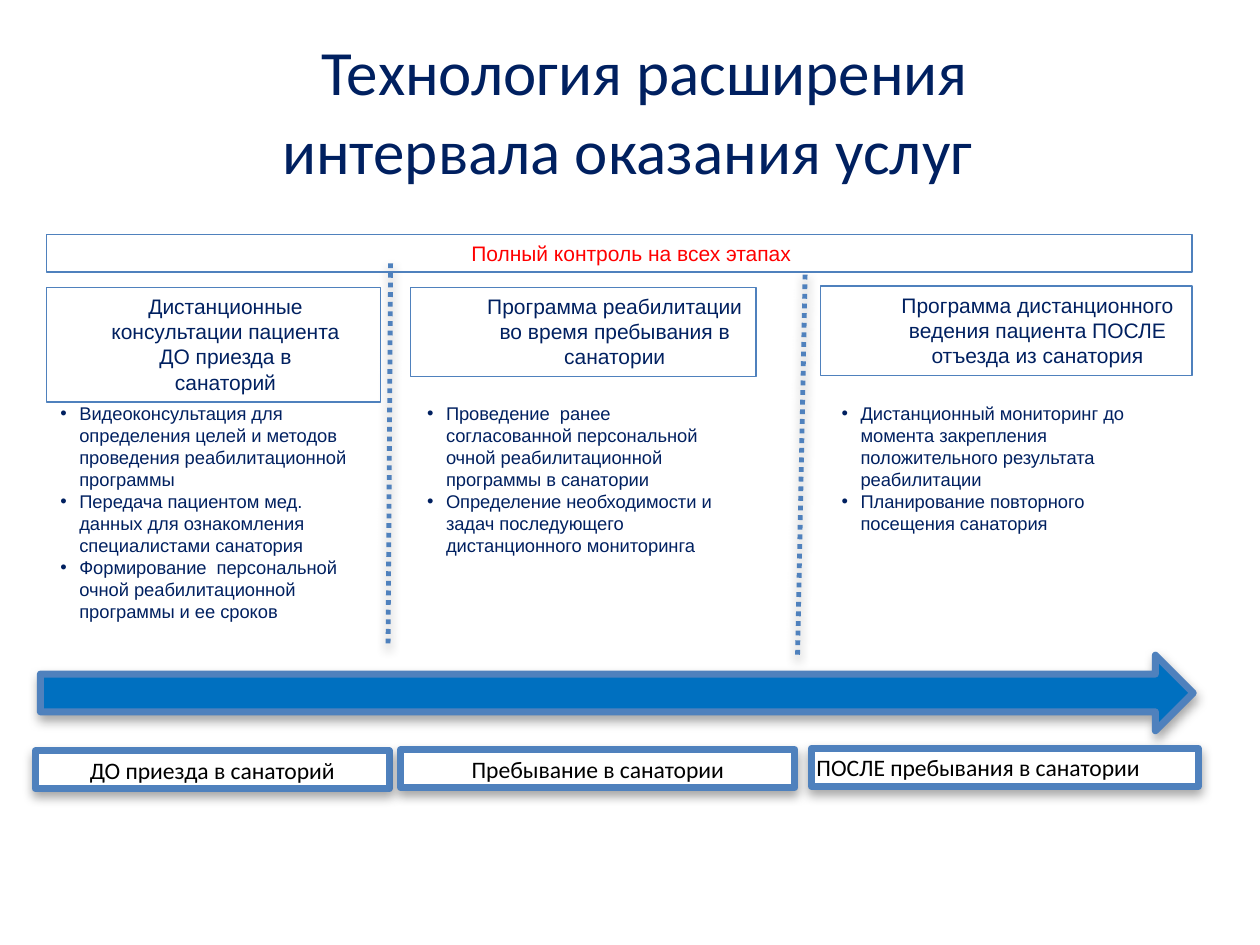
from dataclasses import dataclass
from typing import Optional

import pptx
import pptx.dml.color
import pptx.enum.dml
import pptx.enum.shapes
import pptx.enum.text
import pptx.oxml.ns
import pptx.util
from lxml import etree
from pptx.util import Inches

COLORS = {
    "navy": "002060",
    "red": "FF0000",
    "black": "000000",
    "white": "FFFFFF",
    "border": "4F81BD",
    "arrow": "0070C0",
}
ALIGN = pptx.enum.text.PP_ALIGN
ANCHOR = pptx.enum.text.MSO_ANCHOR
SHAPE = pptx.enum.shapes.MSO_SHAPE

PLAIN_INSETS = (0.1, 0.05, 0.1, 0.05)
LIST_INSETS = (0, 0.05, 0.31, 0.05)
CAPTION_INSETS = (0.04, 0.04, 0.04, 0.04)


@dataclass
class Area:
    left: float
    top: float
    width: float
    height: float

    def lengths(self) -> tuple:
        return tuple(Inches(n) for n in (self.left, self.top, self.width, self.height))


@dataclass
class Stage:
    heading: str
    heading_area: Area
    heading_insets: tuple
    points: list
    points_area: Area
    caption: str
    caption_area: Area
    caption_align: ALIGN


STAGES = [
    Stage(
        "Дистанционные консультации пациента ДО приезда в санаторий",
        Area(0.37, 2.28, 2.65, 0.91), LIST_INSETS,
        ["Видеоконсультация для определения целей и методов проведения реабилитационной программы",
         "Передача пациентом мед. данных для ознакомления специалистами санатория",
         "Формирование  персональной очной реабилитационной программы и ее сроков"],
        Area(0.37, 3.14, 2.72, 1.87),
        "ДО приезда в санаторий", Area(0.28, 5.96, 2.81, 0.3), ALIGN.CENTER,
    ),
    Stage(
        "Программа реабилитации во время пребывания в санатории",
        Area(3.26, 2.28, 2.74, 0.71), PLAIN_INSETS,
        ["Проведение  ранее согласованной персональной очной реабилитационной программы в санатории",
         "Определение необходимости и задач последующего дистанционного мониторинга"],
        Area(3.28, 3.14, 2.92, 1.34),
        "Пребывание в санатории", Area(3.18, 5.95, 3.13, 0.3), ALIGN.CENTER,
    ),
    Stage(
        "Программа дистанционного ведения пациента ПОСЛЕ отъезда из санатория",
        Area(6.51, 2.27, 2.95, 0.71), PLAIN_INSETS,
        ["Дистанционный мониторинг до момента закрепления положительного результата реабилитации",
         "Планирование повторного посещения санатория"],
        Area(6.57, 3.14, 2.92, 1.34),
        "ПОСЛЕ пребывания в санатории", Area(6.44, 5.94, 3.07, 0.3), ALIGN.LEFT,
    ),
]
DIVIDERS = [((3.1, 2.09), (3.08, 5.12)), ((6.39, 2.18), (6.33, 5.2))]


def color(name: str) -> pptx.dml.color.RGBColor:
    return pptx.dml.color.RGBColor.from_string(COLORS[name])


def add_element(parent, tag: str, **attributes: str):
    return etree.SubElement(parent, pptx.oxml.ns.qn(tag), attributes)


def cast_shadow(shape, opacity: int) -> None:
    """Add a soft shadow below a shape whose fill and line are already set."""
    effects = add_element(shape._element.spPr, "a:effectLst")
    shadow = add_element(effects, "a:outerShdw", blurRad=str(pptx.util.Pt(6)),
                         dist=str(pptx.util.Pt(3)), dir="5400000", rotWithShape="0")
    tint = add_element(shadow, "a:srgbClr", val=COLORS["black"])
    add_element(tint, "a:alpha", val=str(opacity * 1000))


def add_span(para, text: str, size: float, font: str, ink: str) -> None:
    span = para.add_run()
    span.text = text
    span.font.size = pptx.util.Pt(size)
    span.font.name = font
    span.font.color.rgb = color(ink)


def indent(para, left: float, first: float) -> None:
    properties = para._p.get_or_add_pPr()
    properties.set("marL", str(Inches(left)))
    properties.set("indent", str(Inches(first)))


def set_frame(frame, insets: tuple, anchor: ANCHOR) -> None:
    frame.word_wrap = True
    frame.auto_size = pptx.enum.text.MSO_AUTO_SIZE.SHAPE_TO_FIT_TEXT
    frame.vertical_anchor = anchor
    (frame.margin_left, frame.margin_top,
     frame.margin_right, frame.margin_bottom) = (Inches(n) for n in insets)


def add_outlined(page, kind: SHAPE, area: Area, width: float, fill: Optional[str] = None):
    shape = page.shapes.add_shape(kind, *area.lengths())
    if fill:
        shape.fill.solid()
        shape.fill.fore_color.rgb = color(fill)
    else:
        shape.fill.background()
    shape.line.color.rgb = color("border")
    shape.line.width = pptx.util.Pt(width)
    if width > 1:
        cast_shadow(shape, 35)
    else:
        shape.shadow.inherit = False
    return shape


def add_heading(page, area: Area, insets: tuple, text: str, ink: str) -> None:
    box = add_outlined(page, SHAPE.RECTANGLE, area, 0.75)
    set_frame(box.text_frame, insets, ANCHOR.TOP)
    para = box.text_frame.paragraphs[0]
    para.level = 1
    para.alignment = ALIGN.CENTER
    indent(para, 0.5, 0)
    add_span(para, text, 12, "Arial", ink)


def add_points(page, area: Area, points: list) -> None:
    frame = page.shapes.add_textbox(*area.lengths()).text_frame
    set_frame(frame, LIST_INSETS, ANCHOR.TOP)
    for number, point in enumerate(points):
        para = frame.add_paragraph() if number else frame.paragraphs[0]
        indent(para, 0.26, -0.15)
        add_element(para._p.get_or_add_pPr(), "a:buFont", typeface="Arial")
        add_element(para._p.get_or_add_pPr(), "a:buChar", char="•")
        add_span(para, point, 10.5, "Arial", "navy")


def add_caption(page, area: Area, text: str, align: ALIGN) -> None:
    box = add_outlined(page, SHAPE.RECTANGLE, area, 4, "white")
    set_frame(box.text_frame, CAPTION_INSETS, ANCHOR.MIDDLE)
    para = box.text_frame.paragraphs[0]
    para.alignment = align
    add_span(para, text, 13.5, "Calibri", "black")


def add_divider(page, start: tuple, end: tuple) -> None:
    divider = page.shapes.add_connector(
        pptx.enum.shapes.MSO_CONNECTOR.STRAIGHT, *(Inches(n) for n in start + end))
    divider.line.color.rgb = color("border")
    divider.line.width = pptx.util.Pt(2.75)
    divider.line.dash_style = pptx.enum.dml.MSO_LINE.ROUND_DOT
    cast_shadow(divider, 38)


def set_title(page, area: Area, text: str) -> None:
    title = page.shapes.title
    title.left, title.top, title.width, title.height = area.lengths()
    title.text_frame.vertical_anchor = ANCHOR.MIDDLE
    para = title.text_frame.paragraphs[0]
    para.alignment = ALIGN.CENTER
    para.line_spacing = 1.05
    indent(para, 0, 0.28)
    add_span(para, text, 36, "Calibri", "navy")


def main() -> None:
    deck = pptx.Presentation()
    deck.slide_width, deck.slide_height = Inches(10), Inches(7.5)
    page = deck.slides.add_slide(deck.slide_layouts[5])
    set_title(page, Area(1.21, 0, 7.54, 1.71), "Технология расширения интервала оказания услуг")
    add_outlined(page, SHAPE.RIGHT_ARROW, Area(0.32, 5.2, 9.15, 0.6), 4, "arrow")
    for start, end in DIVIDERS:
        add_divider(page, start, end)
    for stage in STAGES:
        add_heading(page, stage.heading_area, stage.heading_insets, stage.heading, "navy")
        add_points(page, stage.points_area, stage.points)
        add_caption(page, stage.caption_area, stage.caption, stage.caption_align)
    add_heading(page, Area(0.37, 1.86, 9.09, 0.3), LIST_INSETS,
                "Полный контроль на всех этапах", "red")
    deck.save("out.pptx")


if __name__ == "__main__":
    main()
